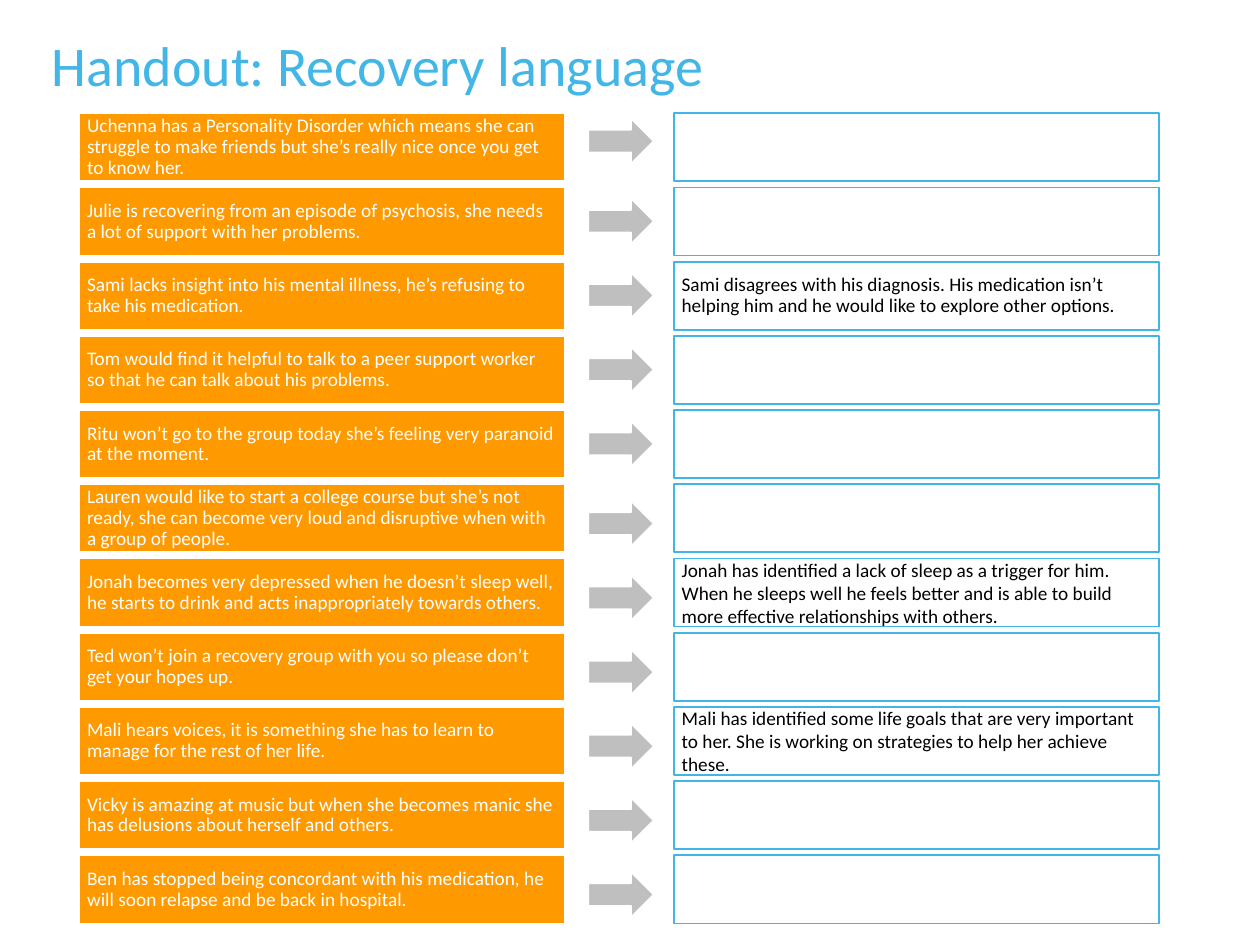
from pptx import Presentation
from pptx.dml.color import RGBColor
from pptx.enum.shapes import MSO_SHAPE
from pptx.enum.text import MSO_ANCHOR, MSO_AUTO_SIZE, PP_ALIGN
from pptx.util import Pt

RECT, ARROW = MSO_SHAPE.RECTANGLE, MSO_SHAPE.RIGHT_ARROW
TOP, MIDDLE = MSO_ANCHOR.TOP, MSO_ANCHOR.MIDDLE
LEFT = PP_ALIGN.LEFT
NO_FIT = MSO_AUTO_SIZE.NONE

COLORS = {"title": "42B6E6", "orange": "FF9900", "blue": "41B6E6",
          "gray": "BFBFBF", "white": "FFFFFF", "black": "000000"}
FIRST, PITCH = 64.8, 42.4
WIDE, HIGH = 277.2, 38.9

# Each row: phrase, reworded phrase, line spacing of the latter, arrow drop
ROWS = [
    ("Uchenna has a Personality Disorder which means she can struggle to make friends "
     "but she’s really nice once you get to know her.", "", 1, 2.9),
    ("Julie is recovering from an episode of psychosis, she needs a lot of support "
     "with her problems.", "", 1, 6.3),
    ("Sami lacks insight into his mental illness, he’s refusing to take his medication.",
     "Sami disagrees with his diagnosis. His medication isn’t helping him and he would "
     "like to explore other options.", 0.9, 6.3),
    ("Tom would find it helpful to talk to a peer support worker so that he can talk "
     "about his problems.", "", 1, 6.3),
    ("Ritu won’t go to the group today she’s feeling very paranoid at the moment.",
     "", 1, 6.3),
    ("Lauren would like to start a college course but she’s not ready, she can become "
     "very loud and disruptive when with a group of people.", "", 1, 9.5),
    ("Jonah becomes very depressed when he doesn’t sleep well, he starts to drink and "
     "acts inappropriately towards others.",
     "Jonah has identified a lack of sleep as a trigger for him. When he sleeps well he "
     "feels better and is able to build more effective relationships with others.", 1, 9.5),
    ("Ted won’t join a recovery group with you so please don’t get your hopes up.",
     "", 1, 9.5),
    ("Mali hears voices, it is something she has to learn to manage for the rest of "
     "her life.",
     "Mali has identified some life goals that are very important to her. She is working "
     "on strategies to help her achieve these.", 1, 9.5),
    ("Vicky is amazing at music but when she becomes manic she has delusions about "
     "herself and others.", "", 1, 9.5),
    ("Ben has stopped being concordant with his medication, he will soon relapse and "
     "be back in hospital.", "", 1, 9.5),
]


def write(shape, text, size=11, color="black", spacing=0.9, anchor=MIDDLE, inset=4.3):
    frame = shape.text_frame
    frame.word_wrap = True
    frame.auto_size = NO_FIT
    frame.vertical_anchor = anchor
    frame.margin_left = frame.margin_right = Pt(inset)
    frame.margin_top = frame.margin_bottom = Pt(min(inset, 4.3))
    frame.text = text
    para = frame.paragraphs[0]
    para.alignment = LEFT
    para.line_spacing = spacing
    font = para.runs[0].font
    font.name = "Calibri"
    font.size = Pt(size)
    font.color.rgb = RGBColor.from_string(COLORS[color])


def draw(kind, left, top, width, height, fill, line):
    shape = slide.shapes.add_shape(kind, Pt(left), Pt(top), Pt(width), Pt(height))
    shape.shadow.inherit = False
    shape.fill.solid()
    shape.fill.fore_color.rgb = RGBColor.from_string(COLORS[fill])
    shape.line.color.rgb = RGBColor.from_string(COLORS[line])
    shape.line.width = Pt(1)
    return shape


deck = Presentation()
deck.slide_width, deck.slide_height = Pt(720), Pt(540)
slide = deck.slides.add_slide(deck.slide_layouts[5])

title = slide.shapes.title
title.left, title.top, title.width, title.height = Pt(22.3), Pt(17.3), Pt(652.3), Pt(74.2)
write(title, "Handout: Recovery language", size=32, color="title", anchor=TOP, inset=7.2)

for i, (phrase, better, spacing, drop) in enumerate(ROWS):
    top = FIRST + i * PITCH
    write(draw(RECT, 45.4, top, WIDE, HIGH, "orange", "white"), phrase, color="white")
    answer = draw(RECT, 385.2, top, WIDE, HIGH, "white", "blue")
    if better:
        write(answer, better, spacing=spacing)
    draw(ARROW, 336.2, top + drop, 37.4, 25.9, "gray", "white")

deck.save("out.pptx")
